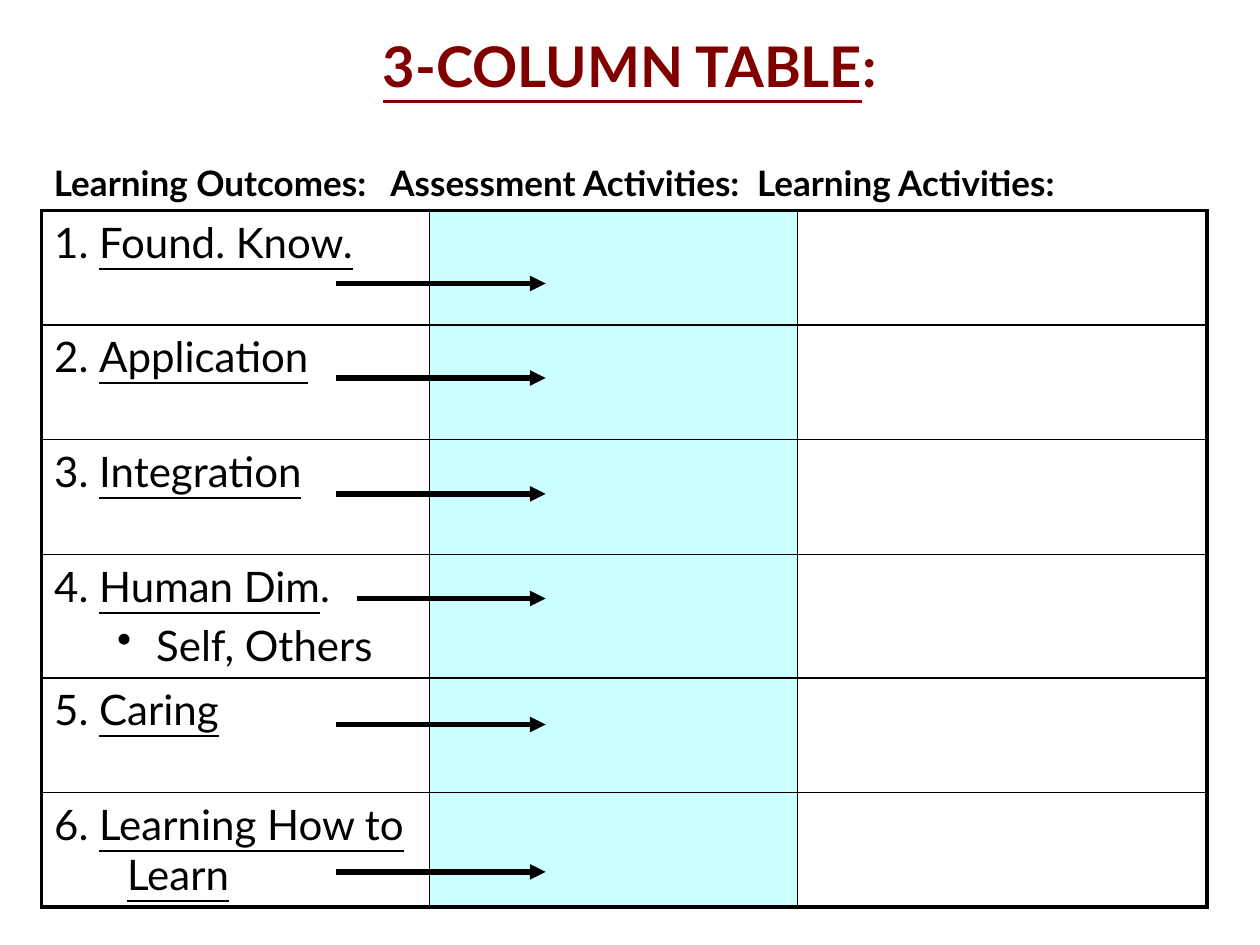
from lxml import etree
from pptx import Presentation
from pptx.dml.color import RGBColor
from pptx.enum import shapes, text
from pptx.oxml.ns import qn
from pptx.util import Inches, Pt

COLORS = {"title": "800000", "ink": "000000", "assessment": "CCFFFF"}
LEFT, TABLE_TOP, WIDTH = 0.33, 1.67, 9.25
COLUMN_WIDTHS = [3.08, 2.92, 3.25]
ROW_HEIGHTS = [0.91, 0.91, 0.91, 0.98, 0.91, 0.91]
OUTCOMES = ["Found. Know.", "Application", "Integration", "Human Dim", "Caring", "Learning How to Learn"]
ARROWS = [(2.67, 2.25), (2.67, 3), (2.67, 3.92), (2.83, 4.75), (2.67, 5.75), (2.67, 6.92)]
ARROW_END = 4.33


def style(font, size, color="ink", bold=False):
    font.name, font.size, font.bold = "Lato", Pt(size), bold
    font.color.rgb = RGBColor.from_string(COLORS[color])


def add_border(cell, side, width):
    properties = cell._tc.get_or_add_tcPr()
    line = etree.SubElement(properties, qn(f"a:ln{side}"), w=str(Pt(width)))
    fill = etree.SubElement(line, qn("a:solidFill"))
    etree.SubElement(fill, qn("a:srgbClr"), val=COLORS["ink"])


presentation = Presentation()
presentation.slide_width, presentation.slide_height = Inches(10), Inches(7.5)
slide = presentation.slides.add_slide(presentation.slide_layouts[5])

title = slide.shapes.title
title.left, title.top, title.width, title.height = map(Inches, (2.73, 0.2, 4.54, 0.63))
title.text_frame.vertical_anchor = text.MSO_ANCHOR.TOP
title.text_frame.auto_size = text.MSO_AUTO_SIZE.NONE
paragraph = title.text_frame.paragraphs[0]
paragraph.alignment = text.PP_ALIGN.CENTER
style(paragraph.font, 32, "title", True)
for words, underlined in (("3-COLUMN TABLE", True), (":", False)):
    run = paragraph.add_run()
    run.text, run.font.underline = words, underlined

headings = slide.shapes.add_textbox(*map(Inches, (LEFT, 1.23, WIDTH, 0.44)))
headings.text_frame.word_wrap = True
paragraph = headings.text_frame.paragraphs[0]
paragraph.text = "Learning Outcomes:\tAssessment Activities:\tLearning Activities:"
style(paragraph.font, 20, bold=True)
tab_list = etree.Element(qn("a:tabLst"))
for position in (2.67, 5.58):
    etree.SubElement(tab_list, qn("a:tab"), pos=str(Inches(position)), algn="l")
paragraph._p.get_or_add_pPr().insert(0, tab_list)

row_count, column_count = len(ROW_HEIGHTS), len(COLUMN_WIDTHS)
table = slide.shapes.add_table(
    row_count, column_count, *map(Inches, (LEFT, TABLE_TOP, WIDTH, sum(ROW_HEIGHTS)))
).table
table.first_row = table.horz_banding = False
for column, width in zip(table.columns, COLUMN_WIDTHS):
    column.width = Inches(width)

for row_index, (row, height) in enumerate(zip(table.rows, ROW_HEIGHTS)):
    row.height = Inches(height)
    for column_index, cell in enumerate(row.cells):
        outer_edges = {
            "L": column_index == 0,
            "R": column_index == column_count - 1,
            "T": row_index == 0,
            "B": row_index == row_count - 1,
        }
        for side, is_outer in outer_edges.items():
            add_border(cell, side, 2.25 if is_outer else 1)
        if column_index == 1:
            cell.fill.solid()
            cell.fill.fore_color.rgb = RGBColor.from_string(COLORS["assessment"])
        else:
            cell.fill.background()

for row_index, outcome in enumerate(OUTCOMES):
    frame = table.cell(row_index, 0).text_frame
    paragraph = frame.paragraphs[0]
    style(paragraph.font, 24)
    properties = paragraph._p.get_or_add_pPr()
    properties.set("marL", str(Inches(0.58)))
    properties.set("indent", str(Inches(-0.58)))
    parts = [(f"{row_index + 1}. ", False), (outcome, True)]
    if outcome == "Human Dim":
        parts.append((".", False))
        detail = frame.add_paragraph()
        detail.text, detail.level, detail.space_before = "Self, Others", 1, Pt(5)
        style(detail.font, 24)
        properties = detail._p.get_or_add_pPr()
        properties.set("marL", str(Inches(0.81)))
        properties.set("indent", str(Inches(-0.31)))
        bullet = etree.Element(qn("a:buChar"), char="•")
        properties.find(qn("a:defRPr")).addprevious(bullet)
    for words, underlined in parts:
        run = paragraph.add_run()
        run.text, run.font.underline = words, underlined

for start, height in ARROWS:
    arrow = slide.shapes.add_connector(
        shapes.MSO_CONNECTOR.STRAIGHT, *map(Inches, (start, height, ARROW_END, height))
    )
    arrow.line.width = Pt(3)
    arrow.line.color.rgb = RGBColor.from_string(COLORS["ink"])
    etree.SubElement(arrow.line._get_or_add_ln(), qn("a:tailEnd"), type="triangle")
    etree.SubElement(arrow._element.spPr, qn("a:effectLst"))

presentation.save("out.pptx")
